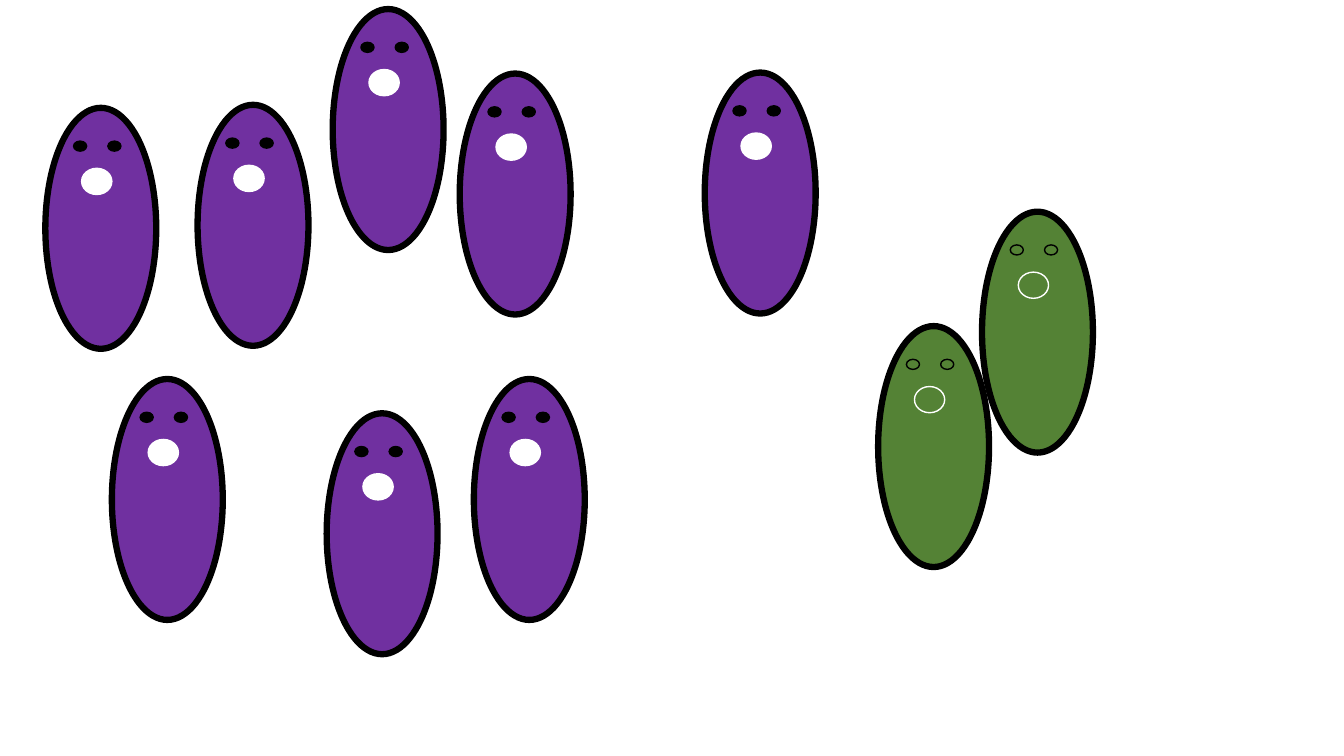
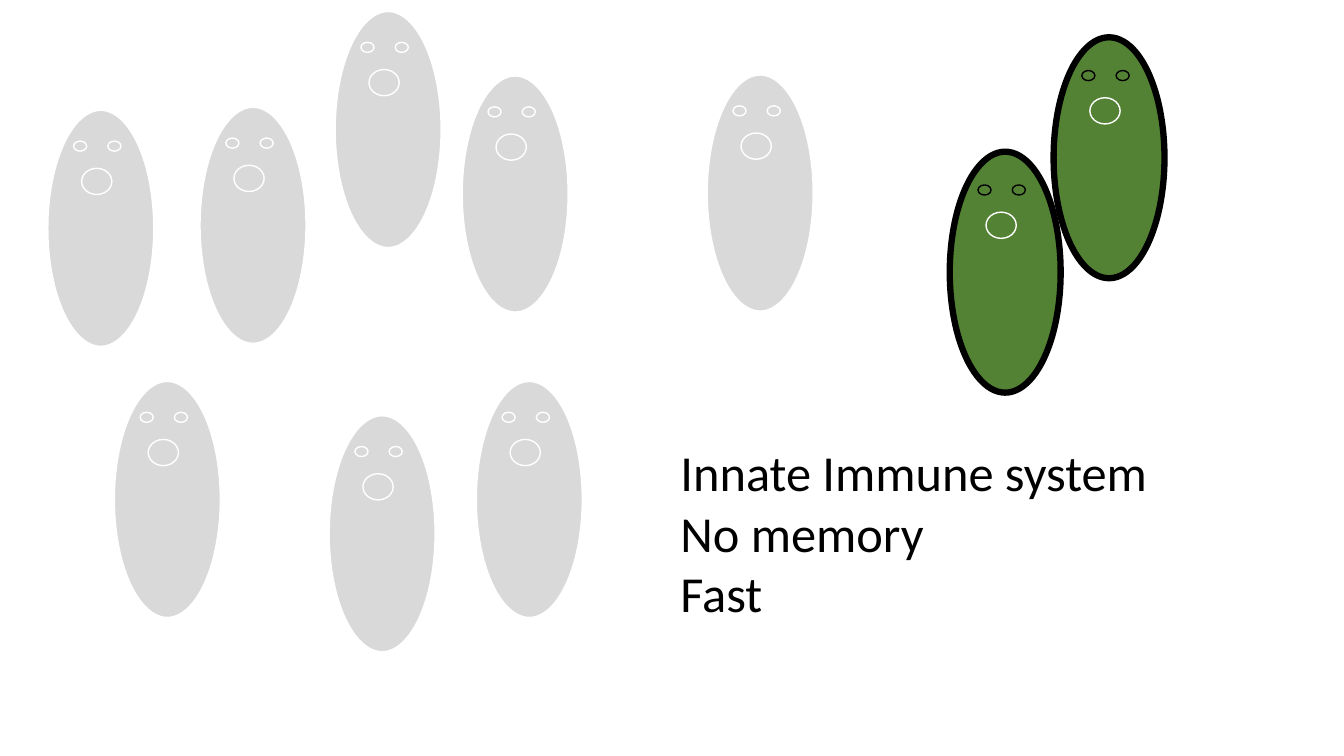
import pptx
import pptx.util
import pptx.dml.color
import pptx.enum.shapes
import pptx.enum.text
from dataclasses import dataclass

Inches = pptx.util.Inches
Pt = pptx.util.Pt
RGBColor = pptx.dml.color.RGBColor

# Shared colours and type
PURPLE = RGBColor(0x70, 0x30, 0xA0)
GREEN = RGBColor(0x54, 0x82, 0x35)
GREY = RGBColor(0xD9, 0xD9, 0xD9)
BLACK = RGBColor(0x00, 0x00, 0x00)
WHITE = RGBColor(0xFF, 0xFF, 0xFF)
FONT = "Calibri"


@dataclass
class CellStyle:
    body: RGBColor
    outline: RGBColor
    eye: RGBColor
    eye_line: RGBColor
    mouth: RGBColor


ACTIVE = CellStyle(PURPLE, BLACK, BLACK, BLACK, WHITE)
FADED = CellStyle(GREY, WHITE, GREY, WHITE, GREY)
INNATE = CellStyle(GREEN, BLACK, GREEN, BLACK, GREEN)

# Top-left corners of the cells, in inches
CROWD = [(1.96, 1.04), (3.24, 4.1), (0.45, 1.07), (3.3, 0.09),
         (1.11, 3.76), (4.7, 3.76), (4.56, 0.73), (6.99, 0.72)]
INNATE_PAIR = [(0, 1.135), (1.03, 0)]


def add_oval(cell, left, top, width, height, fill, line, weight):
    oval = cell.shapes.add_shape(
        pptx.enum.shapes.MSO_SHAPE.OVAL,
        Inches(left), Inches(top), Inches(width), Inches(height))
    oval.shadow.inherit = False
    oval.fill.solid()
    oval.fill.fore_color.rgb = fill
    oval.line.color.rgb = line
    oval.line.width = Pt(weight)


def add_cell(slide, left, top, style):
    """One cell with a face, grouped, placed from its top-left corner."""
    cell = slide.shapes.add_group_shape()
    add_oval(cell, left, top, 1.1, 2.39, style.body, style.outline, 4.5)
    for eye_offset in (0.28, 0.62):
        add_oval(cell, left + eye_offset, top + 0.33, 0.13, 0.1,
                 style.eye, style.eye_line, 1)
    add_oval(cell, left + 0.36, top + 0.6, 0.3, 0.26, style.mouth, WHITE, 1)


def add_cells(slide, left, top, corners, style):
    for x, y in corners:
        add_cell(slide, left + x, top + y, style)


def add_caption(slide, left, top, width, height, lines):
    caption = slide.shapes.add_textbox(
        Inches(left), Inches(top), Inches(width), Inches(height))
    frame = caption.text_frame
    frame.word_wrap = True
    frame.auto_size = pptx.enum.text.MSO_AUTO_SIZE.SHAPE_TO_FIT_TEXT
    for index, line in enumerate(lines):
        paragraph = frame.add_paragraph() if index else frame.paragraphs[0]
        run = paragraph.add_run()
        run.text = line
        run.font.name = FONT
        run.font.size = Pt(36)
        run.font.color.rgb = BLACK


def main():
    deck = pptx.Presentation()
    deck.slide_width = Inches(13.33)
    deck.slide_height = Inches(7.5)
    blank = deck.slide_layouts[6]

    # Slide 1: all cells active
    all_cells = deck.slides.add_slide(blank)
    add_cells(all_cells, 0, 0, CROWD, ACTIVE)
    add_cells(all_cells, 8.71, 2.1, INNATE_PAIR, INNATE)

    # Slide 2: the innate pair in focus
    innate = deck.slides.add_slide(blank)
    add_cells(innate, 0, 0, CROWD, FADED)
    add_caption(innate, 6.65, 4.33, 6.31, 1.92,
                ["Innate Immune system", "No memory", "Fast"])
    add_cells(innate, 9.42, 0.37, INNATE_PAIR, INNATE)

    deck.save("out.pptx")


if __name__ == "__main__":
    main()
